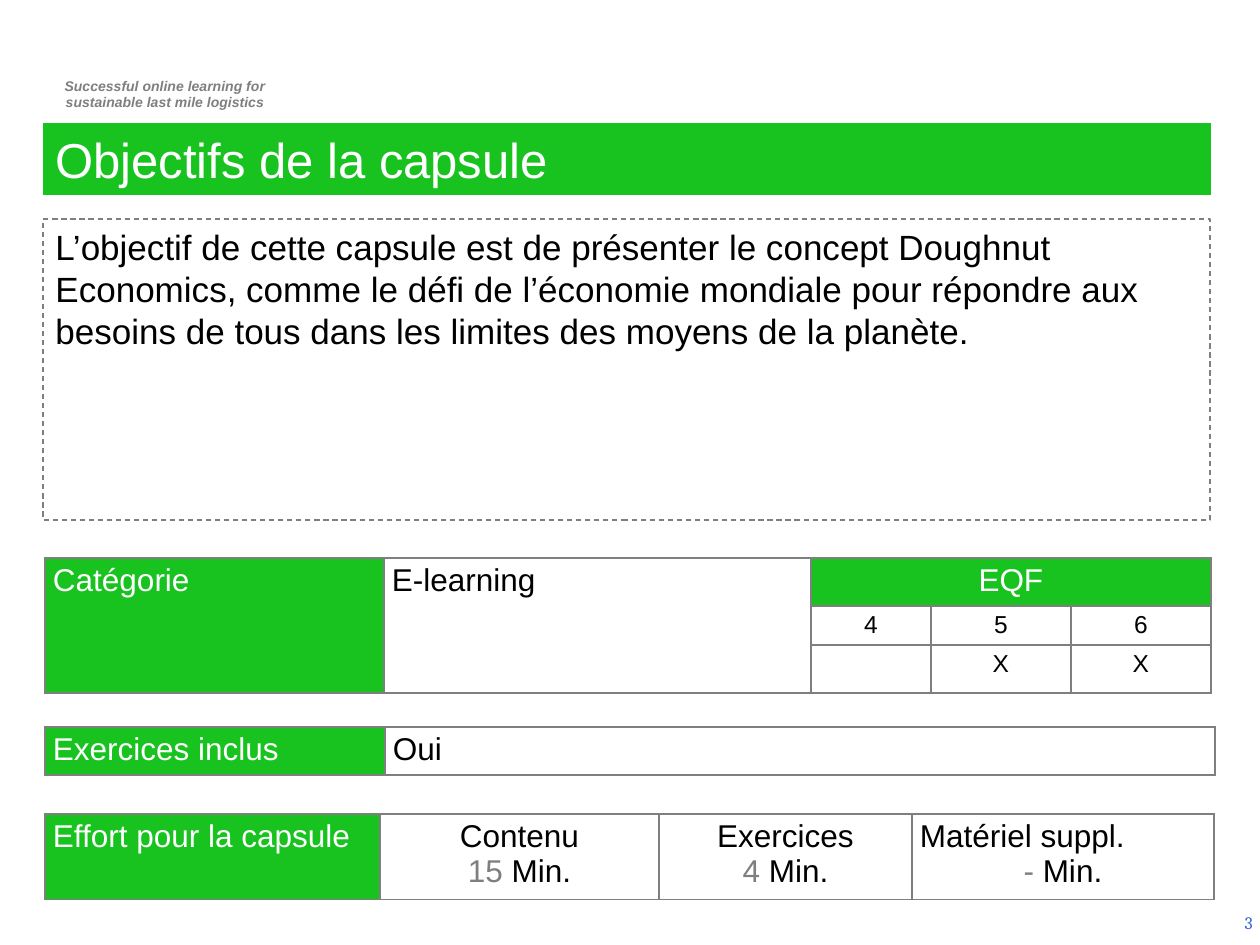
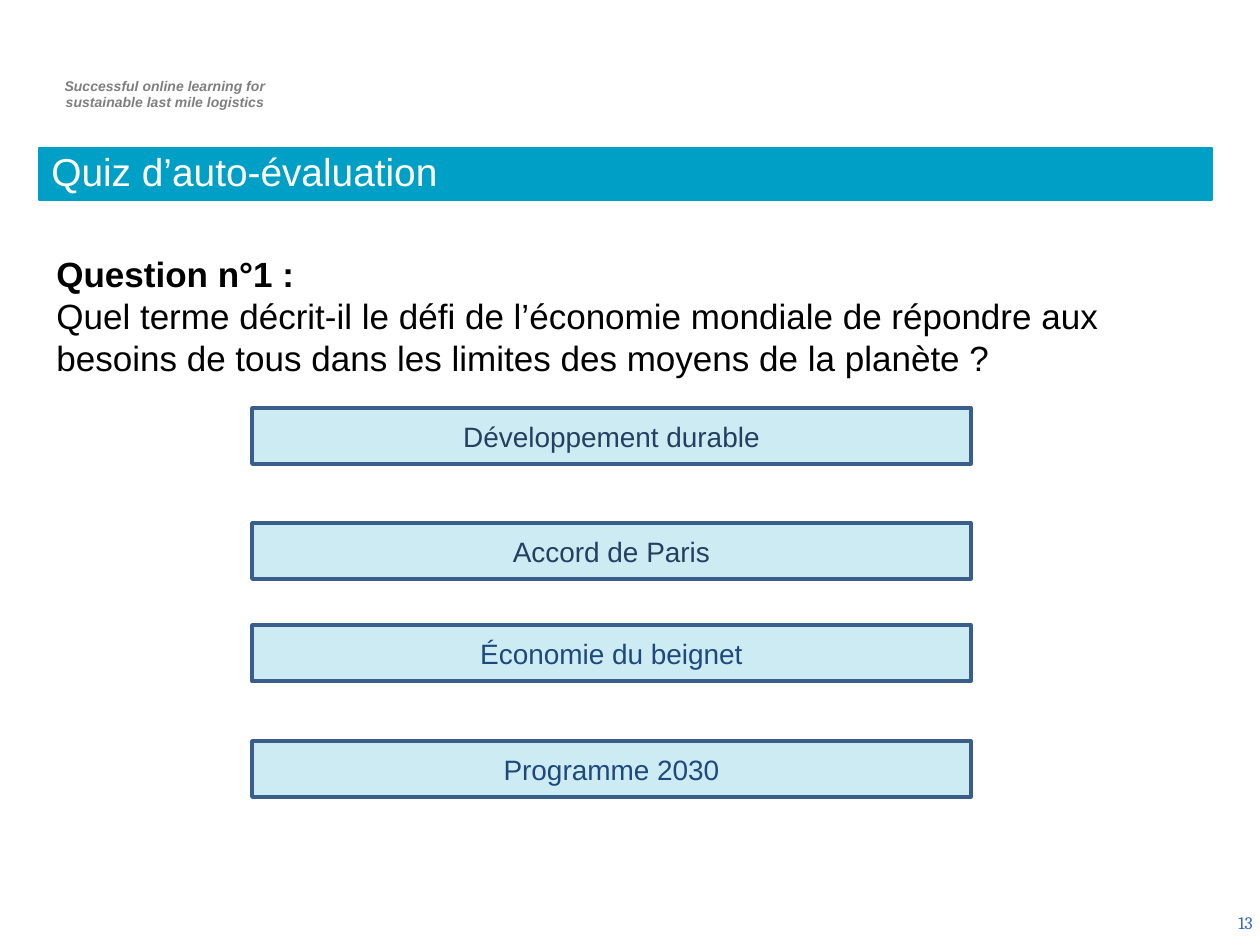
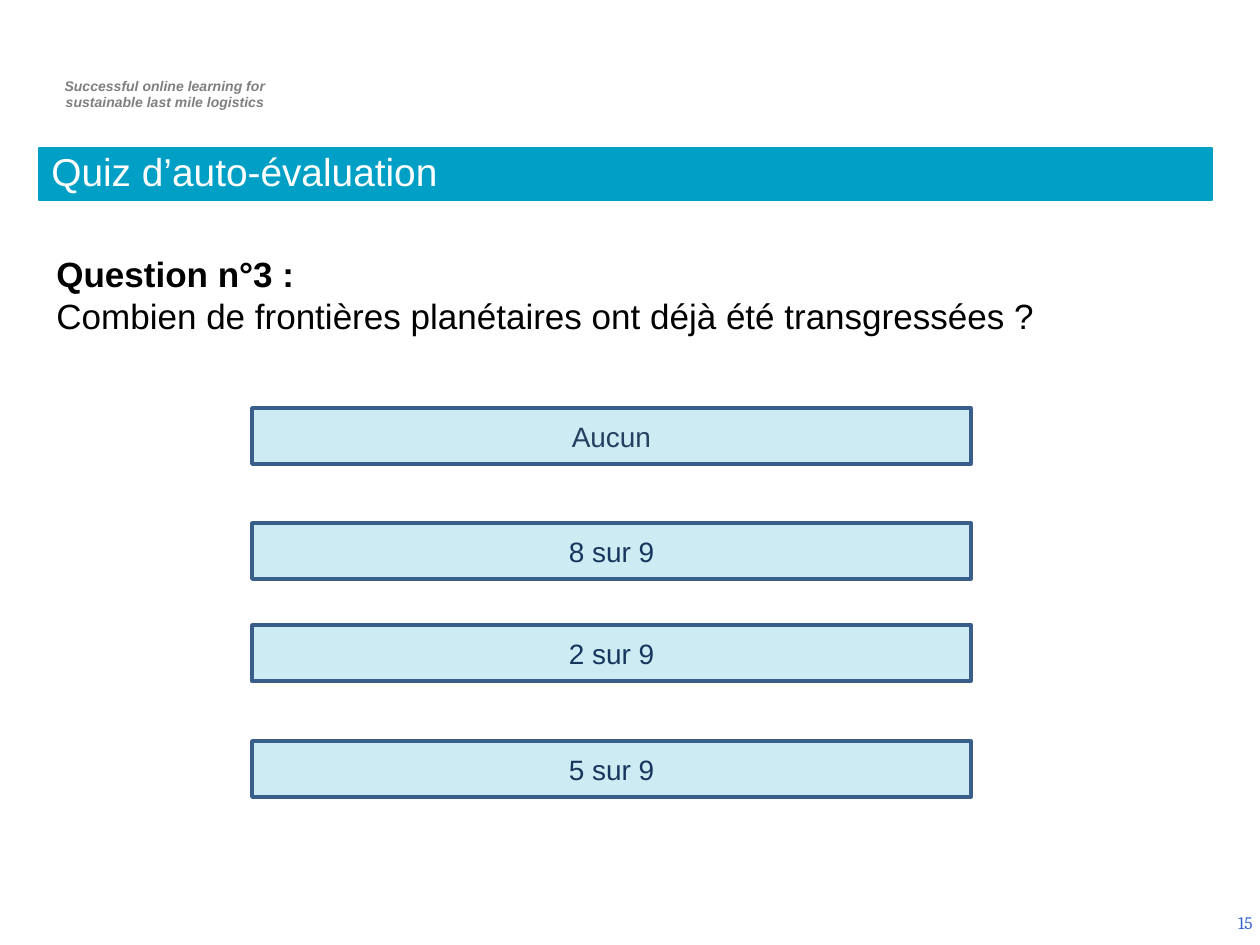
"""Build the capsule objectives slide and two self-assessment quiz slides."""
from lxml.etree import SubElement
from pptx import Presentation
from pptx.dml.color import RGBColor
from pptx.enum.dml import MSO_LINE
from pptx.enum.shapes import MSO_SHAPE
from pptx.enum.text import MSO_ANCHOR as ANCHOR, PP_ALIGN as ALIGN
from pptx.oxml.ns import qn
from pptx.util import Emu, Pt

PX = 914400 / 126
GREEN, BLUE, NAVY_LINE = "18C320", "009FC6", "395E89"
GRAY, BLACK, WHITE, NUMBER_BLUE = "7F7F7F", "000000", "FFFFFF", "3366CC"
DARK, MEDIUM, DEEP = "244061", "1F497D", "17365D"

TAGLINE = ["Successful online learning for", "sustainable last mile logistics"]
OBJECTIVE = ("L’objectif de cette capsule est de présenter le concept Doughnut Economics, "
             "comme le défi de l’économie mondiale pour répondre aux besoins de tous "
             "dans les limites des moyens de la planète.")

CATEGORY_TABLE = {
    "place": (45, 558), "columns": [339, 427, 120, 140, 140], "rows": [47, 39, 47],
    "merges": [(0, 0, 2, 0), (0, 1, 2, 1), (0, 2, 0, 4)],
    "headers": [(0, 0), (0, 2)],
    "cells": {(0, 0): ["Catégorie"], (0, 1): ["E-learning"], (0, 2): ["EQF"],
              (1, 2): ["4"], (1, 3): ["5"], (1, 4): ["6"], (2, 3): ["X"], (2, 4): ["X"]},
    "centered_from": 2,
}
EXERCISE_TABLE = {
    "place": (45, 727), "columns": [340, 830], "rows": [48],
    "merges": [], "headers": [(0, 0)],
    "cells": {(0, 0): ["Exercices inclus"], (0, 1): ["Oui"]},
    "centered_from": 2,
}
EFFORT_TABLE = {
    "place": (45, 814), "columns": [335, 279, 253, 302], "rows": [85],
    "merges": [], "headers": [(0, 0)],
    "cells": {(0, 0): ["Effort pour la capsule"],
              (0, 1): ["Contenu", [("15 ", GRAY), ("Min.", BLACK)]],
              (0, 2): ["Exercices", [("4 ", GRAY), ("Min.", BLACK)]],
              (0, 3): ["Matériel suppl.", [("- ", GRAY), ("Min.", BLACK)]]},
    "centered_from": 1,
}

QUIZZES = [
    {"page": 13, "heading": "Question n°1 :",
     "question": "Quel terme décrit-il le défi de l’économie mondiale de répondre aux "
                 "besoins de tous dans les limites des moyens de la planète ?",
     "answers": [("Développement durable", DARK), ("Accord de Paris", DARK),
                 ("Économie du beignet", MEDIUM), ("Programme 2030", MEDIUM)]},
    {"page": 15, "heading": "Question n°3 :",
     "question": "Combien de frontières planétaires ont déjà été transgressées ?",
     "answers": [("Aucun", DARK), ("8 sur 9", DEEP), ("2 sur 9", DEEP), ("5 sur 9", DEEP)]},
]
ANSWER_TOPS = [408, 523, 625, 741]


def px(*lengths):
    return [Emu(round(length * PX)) for length in lengths]


def rgb(value):
    return RGBColor.from_string(value)


def write(frame, lines, size, color=BLACK, align=ALIGN.LEFT, font="Arial"):
    """Fill a frame; each line is a string or a list of (text, colour) runs."""
    for index, line in enumerate(lines):
        paragraph = frame.add_paragraph() if index else frame.paragraphs[0]
        paragraph.alignment = align
        for text, run_color in [(line, color)] if isinstance(line, str) else line:
            run = paragraph.add_run()
            run.text = text
            run.font.size, run.font.name = Pt(size), font
            run.font.color.rgb = rgb(run_color)


def add_text(slide, place, lines, size, **style):
    frame = slide.shapes.add_textbox(*px(*place)).text_frame
    frame.word_wrap = True
    write(frame, lines, size, **style)
    return frame


def add_box(slide, place, lines, size, fill=None, line=None, width=0.75,
            anchor=ANCHOR.TOP, **style):
    shape = slide.shapes.add_shape(MSO_SHAPE.RECTANGLE, *px(*place))
    shape.shadow.inherit = False
    if fill:
        shape.fill.solid()
        shape.fill.fore_color.rgb = rgb(fill)
    else:
        shape.fill.background()
    if line:
        shape.line.color.rgb, shape.line.width = rgb(line), Pt(width)
    else:
        shape.line.fill.background()
    shape.text_frame.word_wrap = True
    shape.text_frame.vertical_anchor = anchor
    write(shape.text_frame, lines, size, **style)
    return shape


def add_borders(cell):
    properties = cell._tc.get_or_add_tcPr()
    for side in ("a:lnL", "a:lnR", "a:lnT", "a:lnB"):
        border = SubElement(properties, qn(side), w=str(Pt(1)))
        fill = SubElement(border, qn("a:solidFill"))
        SubElement(fill, qn("a:srgbClr"), val=GRAY)


def add_grid(slide, content):
    columns, rows = content["columns"], content["rows"]
    place = px(*content["place"], sum(columns), sum(rows))
    table = slide.shapes.add_table(len(rows), len(columns), *place).table
    table.first_row = table.horz_banding = False
    for column, width in zip(table.columns, px(*columns)):
        column.width = width
    for row, height in zip(table.rows, px(*rows)):
        row.height = height
    for top, left, bottom, right in content["merges"]:
        table.cell(top, left).merge(table.cell(bottom, right))
    for row in range(len(rows)):
        for column in range(len(columns)):
            cell = table.cell(row, column)
            header = (row, column) in content["headers"]
            cell.margin_left, cell.margin_right, cell.margin_top, cell.margin_bottom = px(8, 8, 5, 5)
            add_borders(cell)
            if header:
                cell.fill.solid()
                cell.fill.fore_color.rgb = rgb(GREEN)
            else:
                cell.fill.background()
            write(cell.text_frame, content["cells"].get((row, column), []),
                  14 if row else 18, color=WHITE if header else BLACK,
                  align=ALIGN.CENTER if column >= content["centered_from"] else ALIGN.LEFT)
    return table


def add_slide(presentation, page):
    slide = presentation.slides.add_slide(presentation.slide_layouts[6])
    tagline = add_text(slide, (37, 71, 256, 47), TAGLINE, 8, color=GRAY, align=ALIGN.CENTER)
    for paragraph in tagline.paragraphs:
        for run in paragraph.runs:
            run.font.bold = run.font.italic = True
    number = add_text(slide, (971, 898, 294, 50), [str(page)], 10, color=NUMBER_BLUE,
                      align=ALIGN.RIGHT, font="Cambria")
    number.vertical_anchor = ANCHOR.MIDDLE
    return slide


def add_objectives(presentation):
    slide = add_slide(presentation, 3)
    add_box(slide, (43, 123, 1168, 72), ["Objectifs de la capsule"], 28, fill=GREEN, color=WHITE)
    objective = add_box(slide, (43, 219, 1167, 301), [OBJECTIVE], 20, line=GRAY)
    objective.line.dash_style = MSO_LINE.DASH
    add_grid(slide, CATEGORY_TABLE)
    add_grid(slide, EXERCISE_TABLE)
    effort = add_grid(slide, EFFORT_TABLE)
    effort.cell(0, 3).text_frame.paragraphs[0].alignment = ALIGN.LEFT


def add_quiz(presentation, quiz):
    slide = add_slide(presentation, quiz["page"])
    title = add_box(slide, (39, 148, 1173, 52), ["Quiz d’auto-évaluation"], 22.2, fill=BLUE,
                    line=BLUE, anchor=ANCHOR.BOTTOM, color=WHITE)
    title.text_frame.paragraphs[0].line_spacing = 0.8
    question = add_text(slide, (44, 246, 1173, 140), [quiz["heading"], quiz["question"]], 20)
    question.paragraphs[0].runs[0].font.bold = True
    for top, (answer, color) in zip(ANSWER_TOPS, quiz["answers"]):
        box = add_box(slide, (252, top, 719, 56), [answer], 16, fill=BLUE, line=NAVY_LINE,
                      width=2, anchor=ANCHOR.MIDDLE, color=color, align=ALIGN.CENTER)
        fill_color = box.fill._xPr.find(qn("a:solidFill")).find(qn("a:srgbClr"))
        SubElement(fill_color, qn("a:alpha"), val="20000")


def main():
    presentation = Presentation()
    presentation.slide_width, presentation.slide_height = px(1260, 945)
    add_objectives(presentation)
    for quiz in QUIZZES:
        add_quiz(presentation, quiz)
    presentation.save("out.pptx")


if __name__ == "__main__":
    main()
